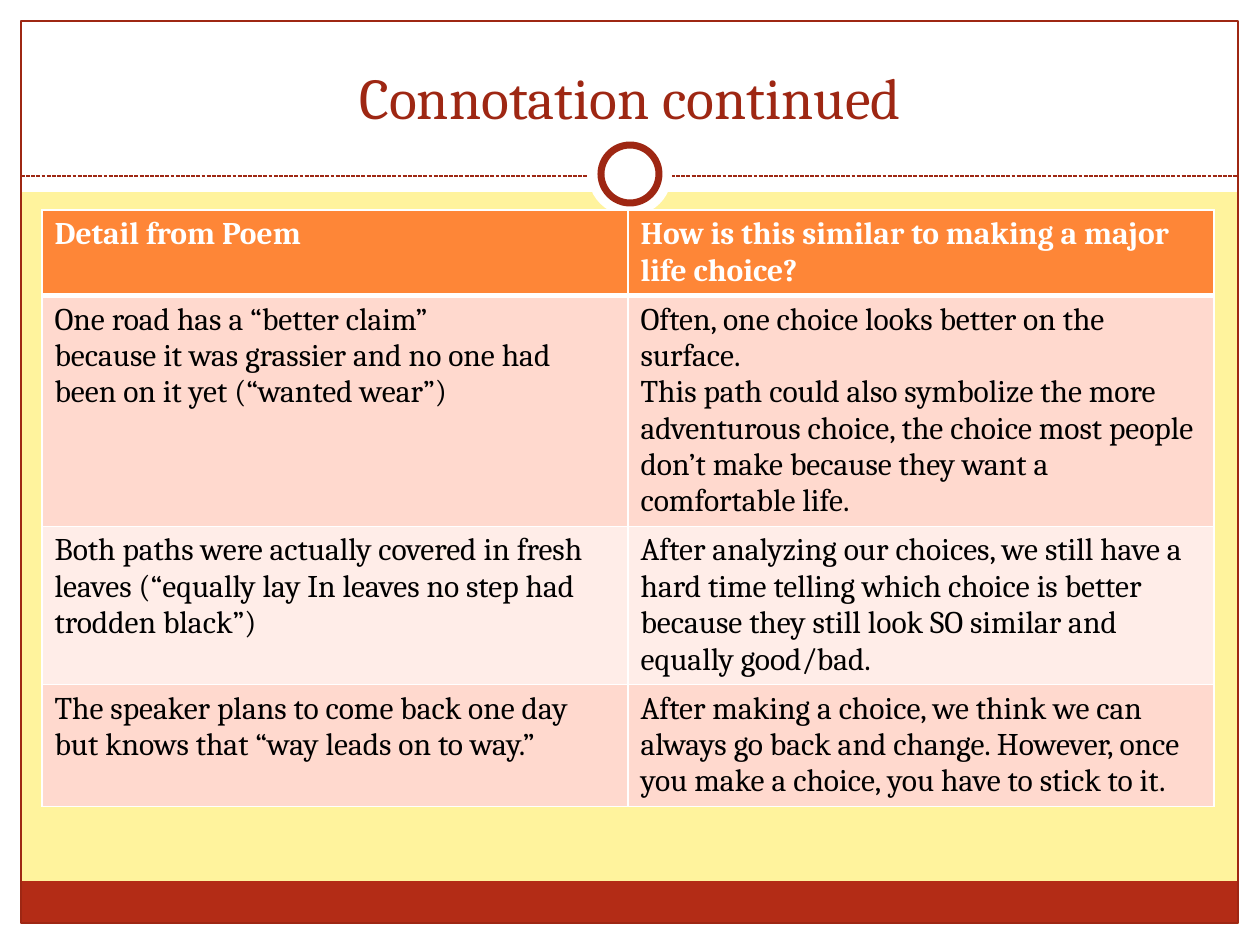
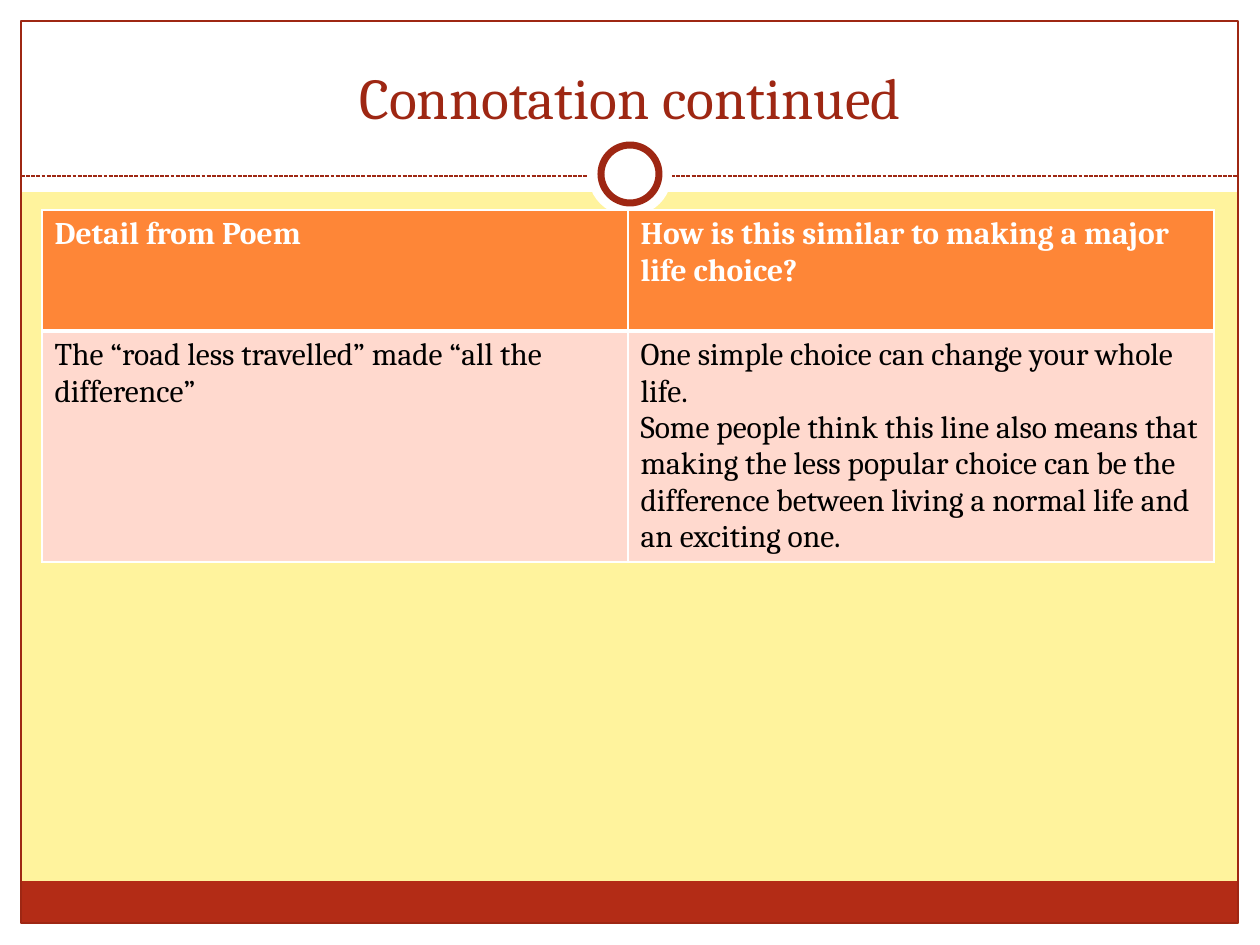
import pptx
import pptx.util
import pptx.dml.color
import pptx.enum.dml
import pptx.enum.shapes
import pptx.enum.text
import pptx.oxml
import pptx.oxml.ns

RGB = pptx.dml.color.RGBColor
SHAPE = pptx.enum.shapes.MSO_SHAPE
WHITE = RGB(0xFF, 0xFF, 0xFF)
BLACK = RGB(0x00, 0x00, 0x00)
YELLOW = RGB(0xFF, 0xF3, 0x9D)
BRICK = RGB(0xB3, 0x2C, 0x16)
RUST = RGB(0x9E, 0x27, 0x13)
ORANGE = RGB(0xFE, 0x86, 0x37)
PINK = RGB(0xFF, 0xD9, 0xCE)
PALE = RGB(0xFF, 0xED, 0xE8)
FONT = "Cambria"
TITLE = "Connotation continued"
HEADER = [["Detail from Poem"], ["How is this similar to making a major life choice?"]]
COL_WIDTH = 586


def px(n):
    return pptx.util.Emu(n * 914400 // 126)


def add_run(p, text, size, color, bold=False):
    r = p.add_run()
    r.text = text
    r.font.name = FONT
    r.font.size = pptx.util.Pt(size)
    r.font.bold = bold
    r.font.color.rgb = color


tables = [
    ([85, 231, 158, 122], [
        HEADER,
        [["One road has a “better claim”",
          "because it was grassier and no one had been on it yet (“wanted wear”)"],
         ["Often, one choice looks better on the surface.",
          "This path could also symbolize the more adventurous choice, the choice most "
          "people don’t make because they want a comfortable life."]],
        [["Both paths were actually covered in fresh leaves (“equally lay In leaves no step "
          "had trodden black”)"],
         ["After analyzing our choices, we still have a hard time telling which choice is "
          "better because they still look SO similar and equally good/bad."]],
        [["The speaker plans to come back one day but knows that “way leads on to way.”"],
         ["After making a choice, we think we can always go back and change. However, once "
          "you make a choice, you have to stick to it."]],
    ]),
    ([121, 231], [
        HEADER,
        [["The “road less travelled” made “all the difference”"],
         ["One simple choice can change your whole life.",
          "Some people think this line also means that making the less popular choice can be "
          "the difference between living a normal life and an exciting one."]],
    ]),
]

frame_parts = [
    (SHAPE.RECTANGLE, 0, 924, 1260, 21, WHITE, None, 0),
    (SHAPE.RECTANGLE, 0, 0, 1260, 192, WHITE, None, 0),
    (SHAPE.RECTANGLE, 0, 0, 21, 945, WHITE, None, 0),
    (SHAPE.RECTANGLE, 1239, 0, 21, 945, WHITE, None, 0),
    (SHAPE.RECTANGLE, 21, 881, 1217, 43, BRICK, None, 0),
    (SHAPE.RECTANGLE, 21, 21, 1217, 902, None, RUST, 0.75),
    (SHAPE.OVAL, 588, 132, 84, 84, WHITE, None, 0),
    (SHAPE.OVAL, 601, 145, 58, 58, WHITE, RUST, 4),
]

prs = pptx.Presentation()
prs.slide_width = px(1260)
prs.slide_height = px(945)
layout = prs.slide_layouts[5]
layout.background.fill.solid()
layout.background.fill.fore_color.rgb = YELLOW
slides = [prs.slides.add_slide(layout) for _ in tables]

shapes = slides[0].shapes
decor = []
for kind, x, y, w, h, fill, line, weight in frame_parts:
    sp = shapes.add_shape(kind, px(x), px(y), px(w), px(h))
    sp.shadow.inherit = False
    if fill is None:
        sp.fill.background()
    else:
        sp.fill.solid()
        sp.fill.fore_color.rgb = fill
    if line is None:
        sp.line.fill.background()
    else:
        sp.line.color.rgb = line
        sp.line.width = pptx.util.Pt(weight)
    decor.append(sp)

rule = shapes.add_connector(pptx.enum.shapes.MSO_CONNECTOR.STRAIGHT,
                            px(21), px(176), px(1239), px(176))
rule.line.color.rgb = RUST
rule.line.width = pptx.util.Pt(0.75)
rule.line.dash_style = pptx.enum.dml.MSO_LINE.SQUARE_DOT
rule.element.spPr.append(pptx.oxml.parse_xml(
    f'<a:effectLst {pptx.oxml.ns.nsdecls("a")}/>'))
decor.insert(6, rule)

for i, sp in enumerate(decor):
    layout.shapes.element.insert(2 + i, sp.element)

for slide, (heights, rows) in zip(slides, tables):
    title = slide.shapes.title
    title.left, title.top, title.width, title.height = px(42), px(32), px(1176), px(105)
    tf = title.text_frame
    tf.vertical_anchor = pptx.enum.text.MSO_ANCHOR.BOTTOM
    p = tf.paragraphs[0]
    p.alignment = pptx.enum.text.PP_ALIGN.CENTER
    add_run(p, TITLE, 33, RUST)

    table = slide.shapes.add_table(len(rows), 2, px(42), px(210),
                                   px(2 * COL_WIDTH), px(sum(heights))).table
    for col in table.columns:
        col.width = px(COL_WIDTH)
    for i, (height, row) in enumerate(zip(heights, rows)):
        table.rows[i].height = px(height)
        for j, paragraphs in enumerate(row):
            cell = table.cell(i, j)
            tcPr = cell._tc.get_or_add_tcPr()
            for side in "LRTB":
                weight = 3 if (i, side) in ((0, "B"), (1, "T")) else 1
                tcPr.append(pptx.oxml.parse_xml(
                    f'<a:ln{side} {pptx.oxml.ns.nsdecls("a")} w="{weight * 12700}">'
                    f'<a:solidFill><a:srgbClr val="{WHITE}"/></a:solidFill></a:ln{side}>'))
            cell.fill.solid()
            cell.fill.fore_color.rgb = ORANGE if i == 0 else PINK if i % 2 else PALE
            tf = cell.text_frame
            for k, text in enumerate(paragraphs):
                p = tf.add_paragraph() if k else tf.paragraphs[0]
                add_run(p, text, 18, BLACK if i else WHITE, i == 0)

prs.save("out.pptx")
